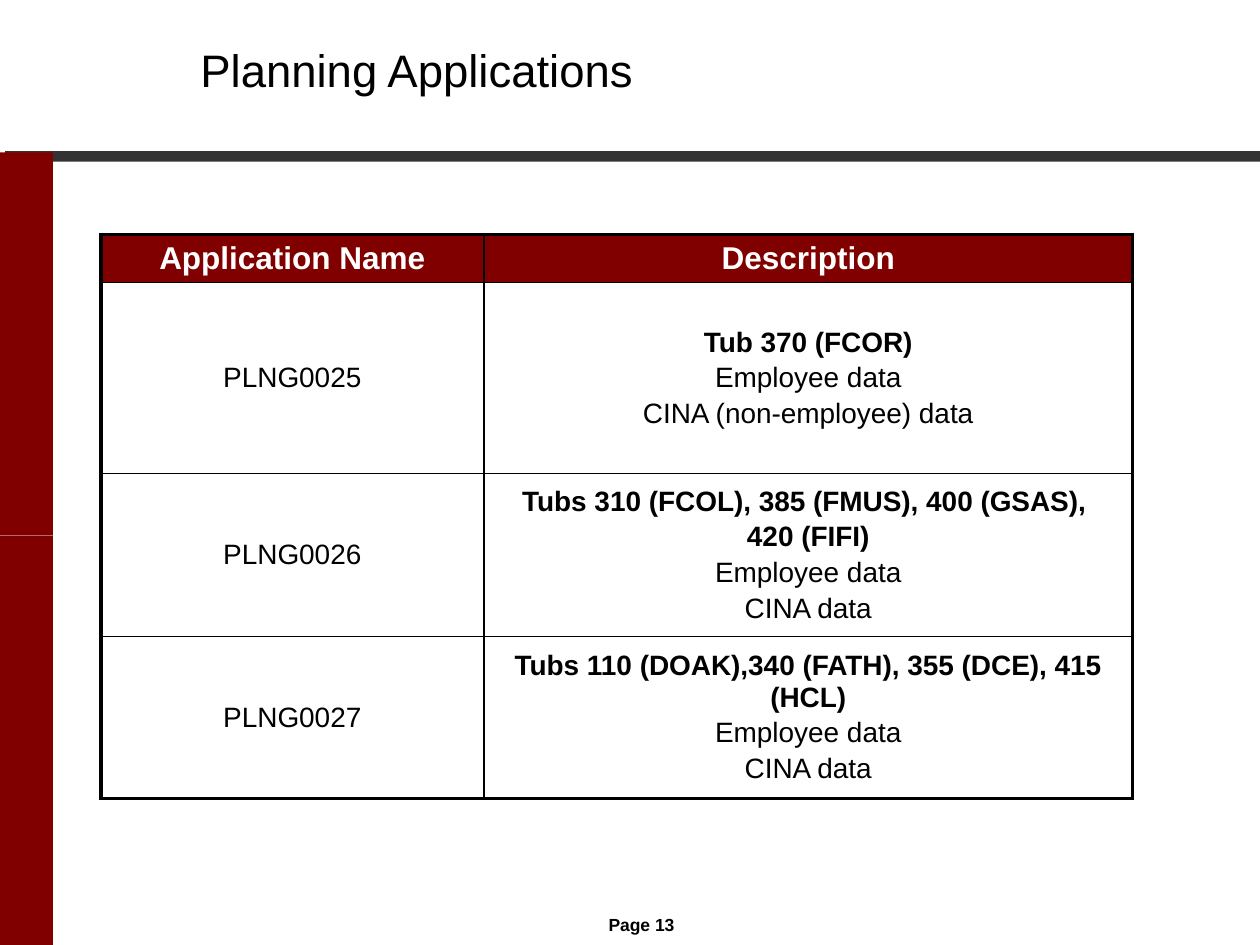
from dataclasses import dataclass

from lxml import etree
from pptx import Presentation
from pptx import util as u
from pptx.dml.color import RGBColor
from pptx.enum import shapes, text
from pptx.oxml.ns import qn

WIDTH, HEIGHT = 10, 7.5


@dataclass(frozen=True)
class Theme:
    font: str = "Arial"
    ink: str = "000000"
    paper: str = "FFFFFF"
    maroon: str = "800000"
    charcoal: str = "333333"
    title_size: float = 26
    header_size: float = 18
    body_size: float = 16
    page_size: float = 10
    thick: float = 2.25
    thin: float = 1


@dataclass(frozen=True)
class Box:
    """Position and size as shares of the slide."""
    x: float
    y: float
    w: float
    h: float

    def emu(self) -> tuple:
        return tuple(u.Inches(share * side) for share, side in
                     zip((self.x, self.y, self.w, self.h), (WIDTH, HEIGHT) * 2))


@dataclass(frozen=True)
class Application:
    name: str
    tubs: tuple
    data: tuple


THEME = Theme()
MARGIN = 0.042
SPLIT = 4.25 / HEIGHT
BAR_TOP = 1.21 / HEIGHT
BARS = (
    (Box(0.004, 0.16, 0.996, 0.011), THEME.charcoal),
    (Box(0, SPLIT, MARGIN, 1 - SPLIT), THEME.maroon),
    (Box(0, BAR_TOP, MARGIN, SPLIT - BAR_TOP), THEME.maroon),
)
TITLE_BOX = Box(0.149, 0, 0.842, 0.152)
TABLE_BOX = Box(0.08, 0.248, 0.819, 0.6)
PAGE_BOX = Box(0.483, 0.963, 0.08, 0.027)
COLUMNS = (3.04, 5.15)
ROWS = (0.38, 1.52, 1.29, 1.29)
HEADERS = ("Application Name", "Description")
APPLICATIONS = (
    Application("PLNG0025", ("Tub 370 (FCOR)",),
                ("Employee data", "CINA (non-employee) data")),
    Application("PLNG0026", ("Tubs 310 (FCOL), 385 (FMUS), 400 (GSAS), ", "420 (FIFI)"),
                ("Employee data", "CINA data")),
    Application("PLNG0027", ("Tubs 110 (DOAK),340 (FATH), 355 (DCE), 415 (HCL)",),
                ("Employee data", "CINA data")),
)


def write(p, words: str, size: float, color: str = THEME.ink, bold: bool = False) -> None:
    r = p.add_run()
    r.text = words
    for key, value in {"name": THEME.font, "size": u.Pt(size), "bold": bold}.items():
        setattr(r.font, key, value)
    r.font.color.rgb = RGBColor.from_string(color)


def draw_bar(s, box: Box, color: str) -> None:
    sp = s.shapes.add_shape(shapes.MSO_SHAPE.RECTANGLE, *box.emu())
    sp.shadow.inherit = False
    sp.fill.solid()
    sp.fill.fore_color.rgb = RGBColor.from_string(color)
    sp.line.fill.background()


def draw_title(s, words: str) -> None:
    sp = s.shapes.title
    for key, value in zip(("left", "top", "width", "height"), TITLE_BOX.emu()):
        setattr(sp, key, value)
    tf = sp.text_frame
    tf.vertical_anchor = text.MSO_ANCHOR.MIDDLE
    p = tf.paragraphs[0]
    p.alignment = text.PP_ALIGN.LEFT
    p.line_spacing = u.Pt(28)
    write(p, words, THEME.title_size)


def draw_page_number(s, words: str) -> None:
    tf = s.shapes.add_textbox(*PAGE_BOX.emu()).text_frame
    for side in ("left", "top", "right", "bottom"):
        setattr(tf, f"margin_{side}", 0)
    tf.word_wrap = True
    p = tf.paragraphs[0]
    p.line_spacing = 1.2
    write(p, words, THEME.page_size, bold=True)


def set_borders(cell, row: int, col: int) -> None:
    """Thick lines on the outside of the table, thin ones within."""
    outer = {"L": col == 0, "R": col == len(COLUMNS) - 1,
             "T": row == 0, "B": row == len(ROWS) - 1}
    tc_pr = cell._tc.get_or_add_tcPr()
    for side, is_outer in outer.items():
        width = u.Pt(THEME.thick if is_outer else THEME.thin)
        ln = etree.SubElement(tc_pr, qn(f"a:ln{side}"), w=str(int(width)))
        fill = etree.SubElement(ln, qn("a:solidFill"))
        etree.SubElement(fill, qn("a:srgbClr"), val=THEME.ink)


def fill_cell(cell, lines: list, header: bool) -> None:
    """Write (words, bold) lines as centred paragraphs."""
    cell.vertical_anchor = text.MSO_ANCHOR.MIDDLE
    if header:
        cell.fill.solid()
        cell.fill.fore_color.rgb = RGBColor.from_string(THEME.maroon)
    else:
        cell.fill.background()
    size = THEME.header_size if header else THEME.body_size
    color = THEME.paper if header else THEME.ink
    tf = cell.text_frame
    for i, (words, bold) in enumerate(lines):
        p = tf.add_paragraph() if i else tf.paragraphs[0]
        p.alignment = text.PP_ALIGN.CENTER
        if i:
            p.space_before = u.Pt(2.6)
        write(p, words, size, color, bold)


def draw_table(s) -> None:
    table = s.shapes.add_table(len(ROWS), len(COLUMNS), *TABLE_BOX.emu()).table
    table.first_row = table.horz_banding = False
    for column, width in zip(table.columns, COLUMNS):
        column.width = u.Inches(width)
    for row, height in zip(table.rows, ROWS):
        row.height = u.Inches(height)
    content = [[[(words, True)] for words in HEADERS]]
    for app in APPLICATIONS:
        description = [(t, True) for t in app.tubs] + [(d, False) for d in app.data]
        content.append([[(app.name, False)], description])
    for row, cells in enumerate(content):
        for col, lines in enumerate(cells):
            cell = table.cell(row, col)
            set_borders(cell, row, col)
            fill_cell(cell, lines, header=row == 0)


def main() -> None:
    prs = Presentation()
    prs.slide_width, prs.slide_height = u.Inches(WIDTH), u.Inches(HEIGHT)
    s = prs.slides.add_slide(prs.slide_layouts[5])
    for box, color in BARS:
        draw_bar(s, box, color)
    draw_title(s, "Planning Applications")
    draw_table(s)
    draw_page_number(s, "Page 13")
    prs.save("out.pptx")


if __name__ == "__main__":
    main()
